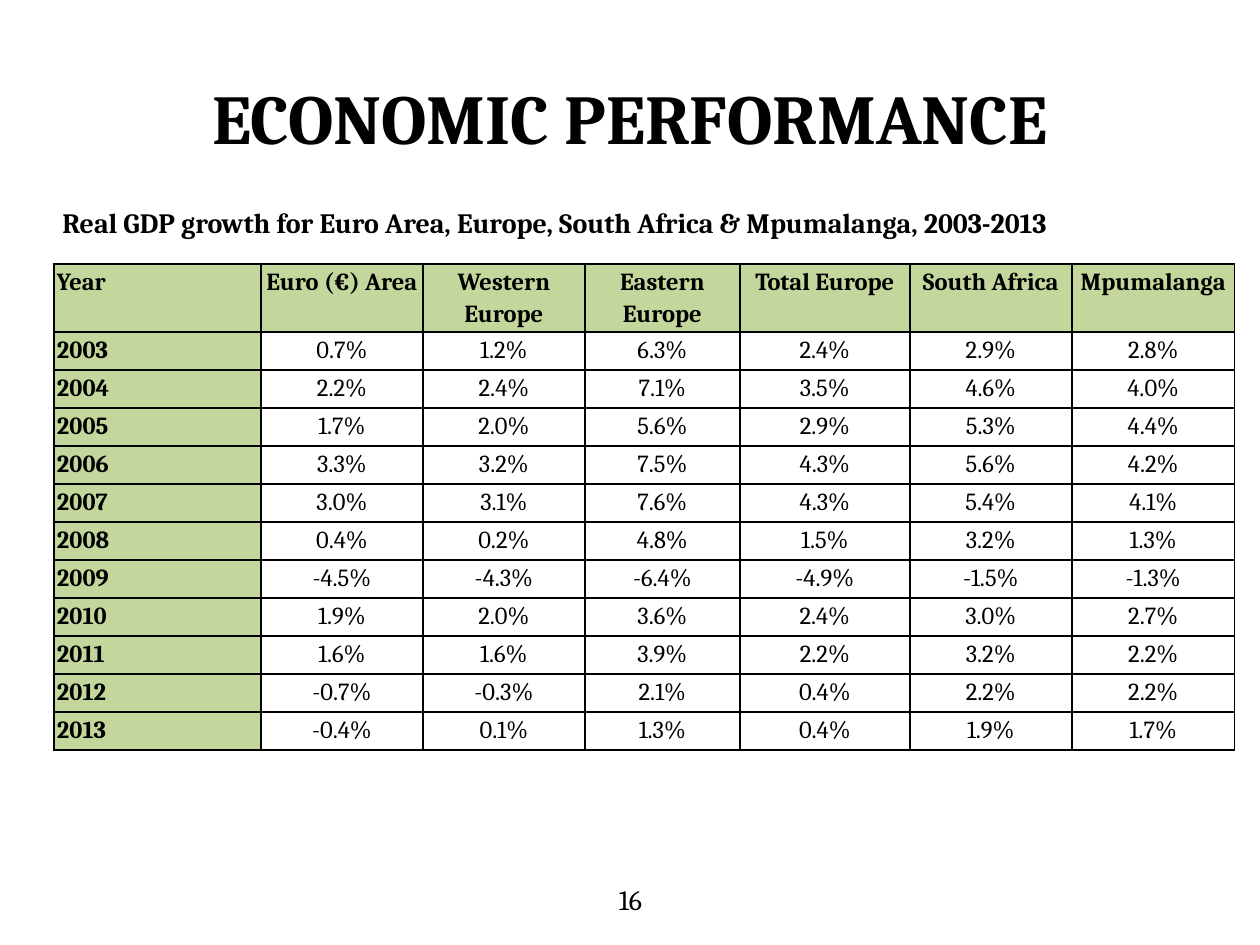
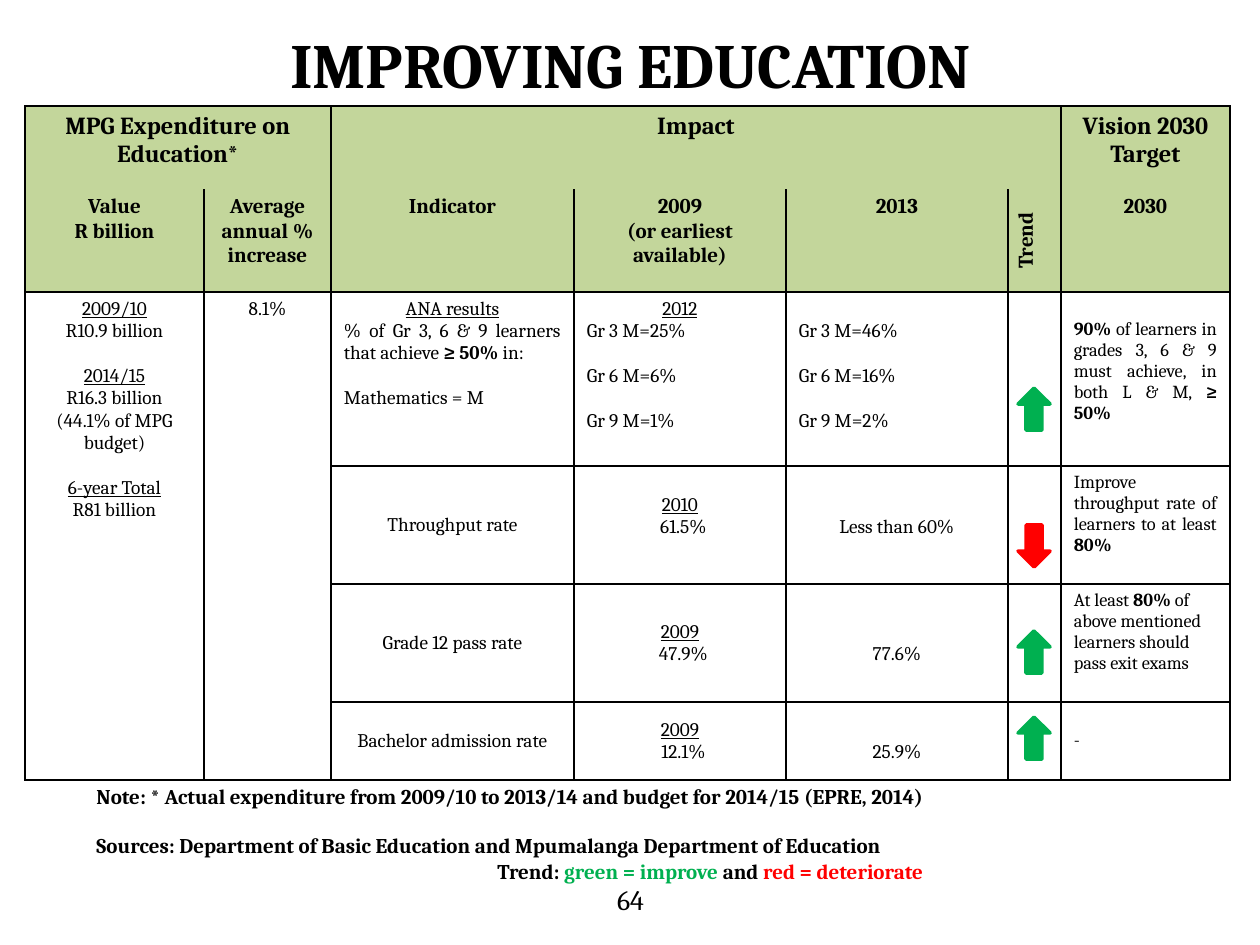
from dataclasses import dataclass

from lxml.etree import SubElement
from pptx import Presentation
from pptx.dml.color import RGBColor
from pptx.enum.shapes import MSO_SHAPE
from pptx.enum.text import MSO_ANCHOR, MSO_AUTO_SIZE, PP_ALIGN
from pptx.oxml.ns import qn
from pptx.util import Emu, Pt

PX_PER_INCH = 126
CENTER, LEFT, JUSTIFY = PP_ALIGN.CENTER, PP_ALIGN.LEFT, PP_ALIGN.JUSTIFY


@dataclass(frozen=True)
class Theme:
    """Colours, font and type sizes shared by the slides."""
    font: str = "Cambria"
    ink: str = "000000"
    header: str = "C3D69B"
    improve: str = "00B050"
    deteriorate: str = "FF0000"
    heading: float = 16
    table_head: float = 14
    column_head: float = 12
    body: float = 11
    target: float = 10.5


THEME = Theme()


@dataclass
class Span:
    """A stretch of text with one look."""
    text: str
    bold: bool = False
    underline: bool = False
    color: str = THEME.ink


@dataclass
class Line:
    """A paragraph; gap is space before in points, indent is in px."""
    spans: list
    align: PP_ALIGN = CENTER
    gap: float = 0
    indent: int = 0
    spacing: float = 1.0


@dataclass
class Entry:
    """The content of a table cell."""
    lines: list
    size: float = THEME.body
    top: int = 6
    middle: bool = False
    fill: str = ""
    vertical: bool = False


def px(length):
    """Turn px into EMU."""
    return Emu(round(length * 914400 / PX_PER_INCH))


def place(shape, left, top, width, height):
    """Set the position and size of a shape in px."""
    shape.left, shape.top, shape.width, shape.height = map(px, (left, top, width, height))


def plain(text, align=CENTER, gap=0, **look):
    """Make a paragraph with one look."""
    return Line([Span(text, **look)], align, gap)


def dated(year, value):
    """Make an underlined year above its value."""
    return [plain(year, underline=True), Line([Span(value)], indent=7)]


def grades(*shares):
    """List the mathematics results of the three grades."""
    return [plain(f"Gr {grade} M={share}", LEFT, 13 if grade > 3 else 0)
            for grade, share in zip((3, 6, 9), shares)]


def write(frame, lines, size):
    """Fill a text frame with paragraphs of one type size."""
    for number, line in enumerate(lines):
        paragraph = frame.add_paragraph() if number else frame.paragraphs[0]
        paragraph.alignment = line.align
        paragraph.line_spacing = line.spacing
        paragraph.space_before = Pt(line.gap)
        if line.indent:
            paragraph._p.get_or_add_pPr().set("marL", str(px(line.indent)))
        for span in line.spans:
            run = paragraph.add_run()
            run.text = span.text
            run.font.name = THEME.font
            run.font.size = Pt(size)
            run.font.bold = span.bold
            run.font.underline = span.underline
            run.font.color.rgb = RGBColor.from_string(span.color)


def add_text(slide, box, lines, size, anchor=MSO_ANCHOR.TOP):
    """Add a wrapping text box."""
    frame = slide.shapes.add_textbox(*map(px, box)).text_frame
    frame.word_wrap = True
    frame.vertical_anchor = anchor
    write(frame, lines, size)


def start_slide(deck, title, box, size, page):
    """Add a slide with its title and page number."""
    slide = deck.slides.add_slide(deck.slide_layouts[5])
    heading = slide.shapes.title
    place(heading, *box)
    heading.text_frame.auto_size = MSO_AUTO_SIZE.NONE
    heading.text_frame.vertical_anchor = MSO_ANCHOR.MIDDLE
    write(heading.text_frame, [plain(title, bold=True)], size)
    add_text(slide, (431, 876, 399, 50), [plain(page)], THEME.heading)
    return slide


def add_borders(cell, open_sides=""):
    """Draw 1 pt borders, except on the open sides."""
    properties = cell._tc.get_or_add_tcPr()
    for position, side in enumerate("LRTB"):
        border = SubElement(properties, qn(f"a:ln{side}"), w="12700")
        if side in open_sides:
            SubElement(border, qn("a:noFill"))
        else:
            ink = SubElement(border, qn("a:solidFill"))
            SubElement(ink, qn("a:srgbClr"), val=THEME.ink)
        properties.insert(position, border)


def add_grid(slide, corner, widths, heights, rows, side_margin, merges=(), open_sides=None):
    """Add a bordered table from rows of entries, None for an empty cell."""
    frame = slide.shapes.add_table(len(heights), len(widths), *map(px, corner),
                                   px(sum(widths)), px(sum(heights)))
    table = frame.table
    table.first_row = table.horz_banding = False
    for column, width in zip(table.columns, widths):
        column.width = px(width)
    for row, height in zip(table.rows, heights):
        row.height = px(height)
    for first_row, first_column, last_row, last_column in merges:
        table.cell(first_row, first_column).merge(table.cell(last_row, last_column))
    for row_number, row in enumerate(rows):
        for column_number, entry in enumerate(row):
            cell = table.cell(row_number, column_number)
            cell.fill.background()
            if entry:
                fill_cell(cell, entry, side_margin)
            add_borders(cell, (open_sides or {}).get(row_number, ""))


def fill_cell(cell, entry, side_margin):
    """Write an entry into its cell."""
    cell.margin_left = cell.margin_right = px(side_margin)
    cell.margin_top = px(entry.top)
    cell.margin_bottom = px(min(entry.top, 6))
    cell.vertical_anchor = MSO_ANCHOR.MIDDLE if entry.middle else MSO_ANCHOR.TOP
    if entry.fill:
        cell.fill.solid()
        cell.fill.fore_color.rgb = RGBColor.from_string(entry.fill)
    if entry.vertical:
        cell._tc.get_or_add_tcPr().set("vert", "vert270")
    write(cell.text_frame, entry.lines, entry.size)


def add_trend(slide, top, improving=True):
    """Add a green upward or red downward arrow to the trend column."""
    arrow = slide.shapes.add_shape(MSO_SHAPE.UP_ARROW, *map(px, (1018, top, 32, 42)))
    color = RGBColor.from_string(THEME.improve if improving else THEME.deteriorate)
    arrow.shadow.inherit = False
    arrow.rotation = 0 if improving else 180
    arrow.fill.solid()
    arrow.fill.fore_color.rgb = color
    arrow.line.color.rgb = color
    arrow.line.width = Pt(2)


def growth_entry(text, is_header, is_label):
    """Make a cell of the growth table."""
    shaded = is_header or is_label
    line = Line([Span(text, bold=shaded)], LEFT if is_label else CENTER, spacing=1.15)
    return Entry([line], THEME.table_head, top=0, fill=THEME.header if shaded else "")


def head(*texts, size=THEME.column_head, vertical=False):
    """Make a shaded heading cell."""
    return Entry([plain(text, bold=True) for text in texts], size,
                 fill=THEME.header, vertical=vertical)


def target(*spans, align=JUSTIFY, top=6):
    """Make a cell of the Vision 2030 column."""
    return Entry([Line(list(spans), align)], THEME.target, top=top)


def rate(text, top=6):
    """Make a vertically centred single-line cell."""
    return Entry([plain(text)], top=top, middle=True)


def build_performance(deck):
    """Build the slide on GDP growth."""
    slide = start_slide(deck, "ECONOMIC PERFORMANCE", (63, 38, 1134, 158), 40, "16")
    regions = ["Year", "Euro (€) Area", "Western Europe", "Eastern Europe",
               "Total Europe", "South Africa", "Mpumalanga"]
    growth = {
        2003: (0.7, 1.2, 6.3, 2.4, 2.9, 2.8),
        2004: (2.2, 2.4, 7.1, 3.5, 4.6, 4.0),
        2005: (1.7, 2.0, 5.6, 2.9, 5.3, 4.4),
        2006: (3.3, 3.2, 7.5, 4.3, 5.6, 4.2),
        2007: (3.0, 3.1, 7.6, 4.3, 5.4, 4.1),
        2008: (0.4, 0.2, 4.8, 1.5, 3.2, 1.3),
        2009: (-4.5, -4.3, -6.4, -4.9, -1.5, -1.3),
        2010: (1.9, 2.0, 3.6, 2.4, 3.0, 2.7),
        2011: (1.6, 1.6, 3.9, 2.2, 3.2, 2.2),
        2012: (-0.7, -0.3, 2.1, 0.4, 2.2, 2.2),
        2013: (-0.4, 0.1, 1.3, 0.4, 1.9, 1.7),
    }
    texts = [regions] + [[str(year)] + [f"{value:.1f}%" for value in values]
                         for year, values in growth.items()]
    rows = [[growth_entry(text, row == 0, column == 0) for column, text in enumerate(line)]
            for row, line in enumerate(texts)]
    add_grid(slide, (54, 264), [207, 162, 162, 155, 170, 162, 163],
             [68] + [38] * len(growth), rows, side_margin=3)
    subtitle = "Real GDP growth for Euro Area, Europe, South Africa & Mpumalanga, 2003-2013"
    add_text(slide, (50, 199, 1068, 47), [plain(subtitle, LEFT, bold=True)],
             THEME.heading, MSO_ANCHOR.MIDDLE)


def education_rows():
    """List the cells of the education table."""
    expenditure = Entry([
        plain("2009/10", underline=True), plain("R10.9 billion"),
        plain("2014/15", gap=13, underline=True), plain("R16.3 billion"),
        plain("(44.1% of MPG budget)"),
        plain("6-year Total", gap=13, underline=True), plain("R81 billion")])
    assessment = Entry([
        plain("ANA results", underline=True),
        Line([Span("% of Gr 3, 6 & 9 learners that achieve "), Span("≥ 50%", bold=True),
              Span(" in:")], JUSTIFY),
        plain("Mathematics = M", LEFT, 13)])
    earliest = Entry([plain("2012", underline=True)] + grades("25%", "6%", "1%"))
    latest = Entry(grades("46%", "16%", "2%"), top=28)
    return [
        [head("MPG Expenditure on Education*", size=THEME.table_head), None,
         head("Impact", size=THEME.table_head), None, None, None,
         head("Vision 2030 Target", size=THEME.table_head)],
        [head("Value", "R billion"), head("Average annual % increase"), head("Indicator"),
         head("2009", "(or earliest available)"), head("2013"),
         head("Trend", vertical=True), head("2030")],
        [expenditure, Entry([plain("8.1%")]), assessment, earliest, latest, None,
         target(Span("90% ", bold=True),
                Span("of learners in grades 3, 6 & 9 must achieve, in both L & M, "),
                Span("≥ 50%", bold=True), top=27)],
        [None, None, rate("Throughput rate"), Entry(dated("2010", "61.5%"), top=28),
         Entry([plain("Less than 60%")], top=50), None,
         target(Span("Improve throughput rate of learners to at least "),
                Span("80%", bold=True))],
        [None, None, rate("Grade 12 pass rate"),
         Entry(dated("2009", "47.9%"), middle=True), rate("77.6%", top=28), None,
         target(Span("At least "), Span("80% ", bold=True),
                Span("of above mentioned learners should pass exit exams"), align=LEFT)],
        [None, None, rate("Bachelor admission rate"),
         Entry(dated("2009", "12.1%"), middle=True), rate("25.9%", top=28), None,
         Entry([plain("-", LEFT)], THEME.target, middle=True)],
    ]


def build_education(deck):
    """Build the slide on education results."""
    slide = start_slide(deck, "IMPROVING EDUCATION", (64, -34, 1133, 195), 36, "64")
    add_grid(slide, (25, 106), [179, 127, 243, 212, 222, 53, 169],
             [83, 103, 174, 118, 118, 78], education_rows(), side_margin=13,
             merges=[(0, 0, 0, 1), (0, 2, 0, 5), (2, 0, 5, 0), (2, 1, 5, 1)],
             open_sides={0: "B", 1: "T"})
    for top, improving in ((388, True), (525, False), (631, True), (717, True)):
        add_trend(slide, top, improving)
    legend = Line([Span("Trend:", bold=True),
                   Span(" green = improve ", bold=True, color=THEME.improve),
                   Span("and ", bold=True),
                   Span("red = deteriorate", bold=True, color=THEME.deteriorate)],
                  LEFT, indent=401)
    note = "Note: * Actual expenditure from 2009/10 to 2013/14 and budget for 2014/15 (EPRE, 2014)"
    sources = "Sources: Department of Basic Education and Mpumalanga Department of Education"
    add_text(slide, (84, 777, 1040, 89),
             [plain(note, LEFT, bold=True), plain(sources, LEFT, 14, bold=True), legend],
             THEME.column_head)


def main():
    """Build and save the presentation."""
    deck = Presentation()
    deck.slide_width, deck.slide_height = px(1260), px(945)
    build_performance(deck)
    build_education(deck)
    deck.save("out.pptx")


if __name__ == "__main__":
    main()
